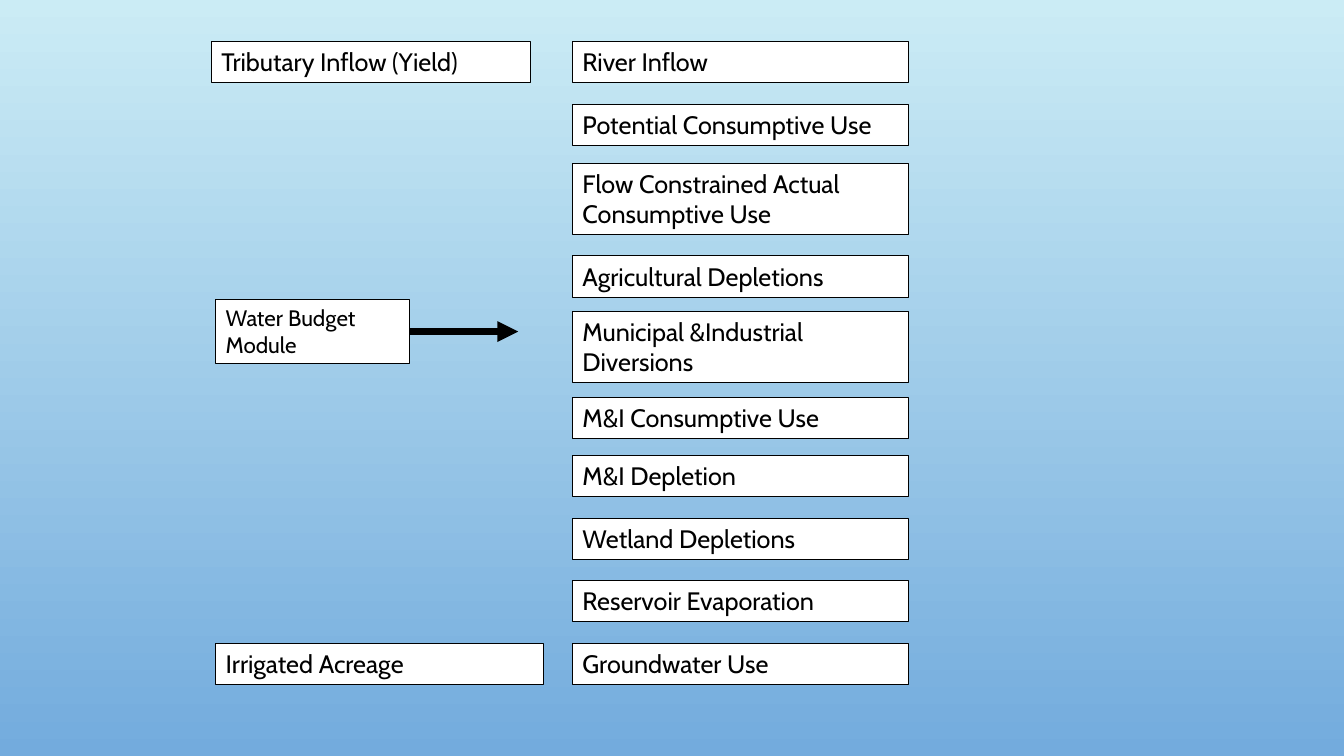
from lxml.etree import SubElement
from pptx import Presentation
from pptx.dml.color import RGBColor
from pptx.enum.shapes import MSO_CONNECTOR as Connector, MSO_SHAPE as Shape
from pptx.enum.text import MSO_ANCHOR as Anchor, MSO_AUTO_SIZE as AutoSize, PP_ALIGN as Align
from pptx.oxml.ns import qn
from pptx.util import Cm, Pt

RIGHT_SIDE = 3
ROW_HEIGHT = 1.04
TWO_LINE_HEIGHT = 1.8
OUTPUT_LEFT, OUTPUT_WIDTH = 14.43, 8.47
MODULE_LEFT = 5.44

OUTPUTS = [
    ("River Inflow", 1.04, ROW_HEIGHT),
    ("Potential Consumptive Use", 2.64, ROW_HEIGHT),
    ("Flow Constrained Actual Consumptive Use", 4.11, TWO_LINE_HEIGHT),
    ("Agricultural Depletions", 6.45, ROW_HEIGHT),
    ("Municipal &Industrial Diversions", 7.85, TWO_LINE_HEIGHT),
    ("M&I Consumptive Use", 10.01, ROW_HEIGHT),
    ("M&I Depletion", 11.48, ROW_HEIGHT),
    ("Wetland Depletions", 13.06, ROW_HEIGHT),
    ("Reservoir Evaporation", 14.63, ROW_HEIGHT),
    ("Groundwater Use", 16.21, ROW_HEIGHT),
]


def color(value):
    return RGBColor.from_string(value)


class Diagram:
    font = "Cabin"
    ink = "000000"
    paper = "FFFFFF"

    def __init__(self, page):
        self.page = page

    def background(self, top_color, bottom_color):
        fill = self.page.background.fill
        fill.gradient()
        fill.gradient_angle = 270
        for stop, value in zip(fill.gradient_stops, (top_color, bottom_color)):
            stop.color.rgb = color(value)

    def box(self, text, left, top, width, height=ROW_HEIGHT, size=18):
        box = self.page.shapes.add_shape(
            Shape.RECTANGLE, Cm(left), Cm(top), Cm(width), Cm(height))
        box.shadow.inherit = False
        box.fill.solid()
        box.fill.fore_color.rgb = color(self.paper)
        box.line.color.rgb = color(self.ink)
        box.line.width = Pt(0.75)
        frame = box.text_frame
        frame.word_wrap = True
        frame.auto_size = AutoSize.SHAPE_TO_FIT_TEXT
        frame.vertical_anchor = Anchor.TOP
        para = frame.paragraphs[0]
        para.alignment = Align.LEFT
        span = para.add_run()
        span.text = text
        span.font.name = self.font
        span.font.size = Pt(size)
        span.font.color.rgb = color(self.ink)
        return box

    def arrow_from(self, box, end_left):
        """Draw a level arrow from the right side of a box."""
        middle = box.top + box.height // 2
        arrow = self.page.shapes.add_connector(
            Connector.STRAIGHT, box.left + box.width, middle, Cm(end_left), middle)
        arrow.begin_connect(box, RIGHT_SIDE)
        arrow.line.color.rgb = color(self.ink)
        arrow.line.width = Pt(5)
        SubElement(arrow.line._get_or_add_ln(), qn("a:tailEnd"), type="triangle")
        SubElement(arrow._element.spPr, qn("a:effectLst"))


def main():
    deck = Presentation()
    deck.slide_width, deck.slide_height = Cm(33.87), Cm(19.05)
    diagram = Diagram(deck.slides.add_slide(deck.slide_layouts[6]))
    diagram.background("CBECF5", "73ABDD")

    diagram.box("Tributary Inflow (Yield)", 5.33, 1.04, 8.05)
    module = diagram.box("Water Budget Module", MODULE_LEFT, 7.54, 4.88, 1.63, size=16)
    diagram.arrow_from(module, 13.06)
    diagram.box("Irrigated Acreage", MODULE_LEFT, 16.21, 8.26)
    for text, top, height in OUTPUTS:
        diagram.box(text, OUTPUT_LEFT, top, OUTPUT_WIDTH, height)

    deck.save("out.pptx")


if __name__ == "__main__":
    main()
